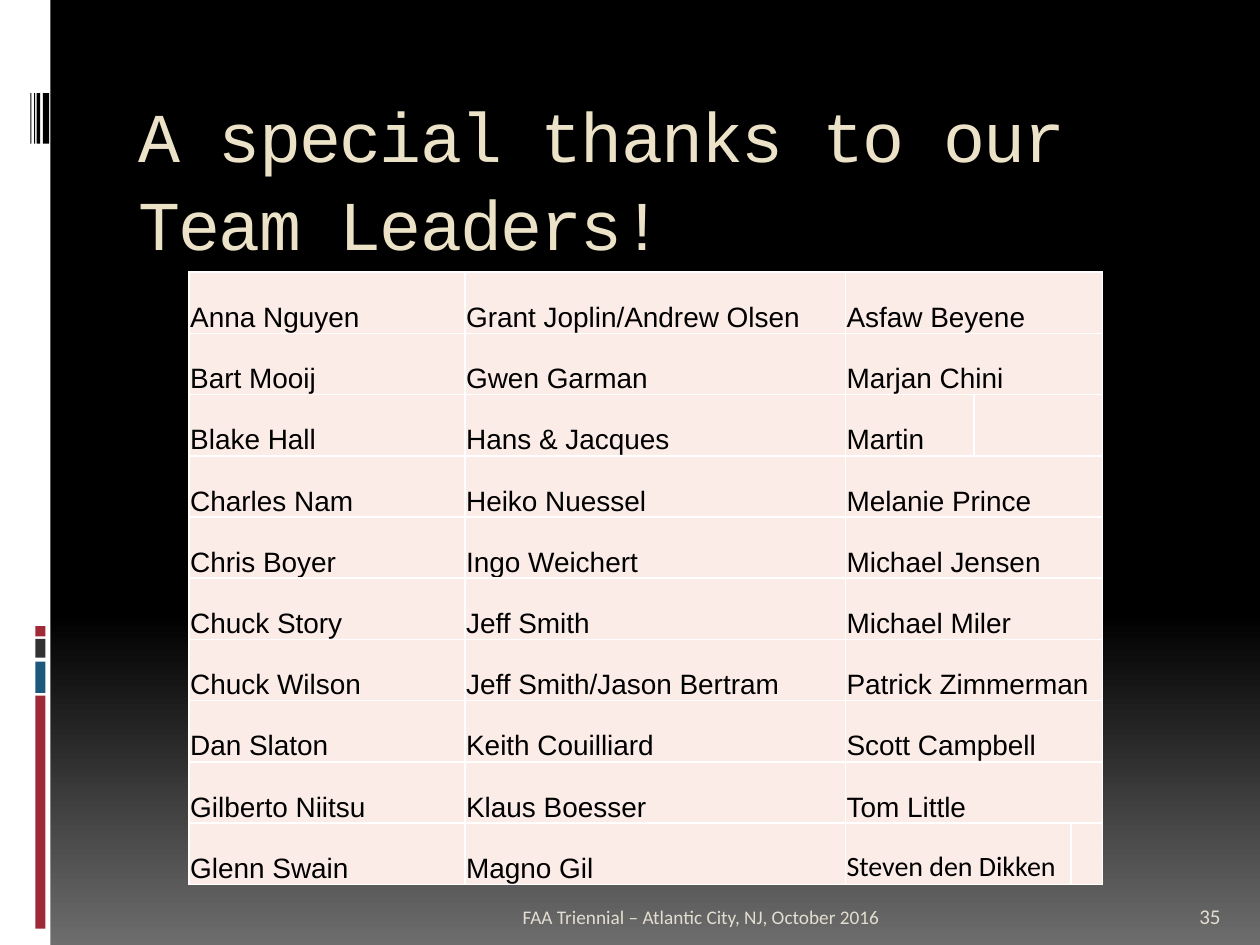
from dataclasses import dataclass

from lxml import etree
from pptx import Presentation
from pptx.dml.color import RGBColor
from pptx.enum.shapes import MSO_SHAPE
from pptx.enum.text import MSO_ANCHOR, PP_ALIGN
from pptx.oxml.ns import qn
from pptx.util import Inches, Pt

RECTANGLE = MSO_SHAPE.RECTANGLE
TOP, BOTTOM = MSO_ANCHOR.TOP, MSO_ANCHOR.BOTTOM
LEFT, RIGHT = PP_ALIGN.LEFT, PP_ALIGN.RIGHT


@dataclass(frozen=True)
class Theme:
    """Colours, fonts and type sizes of the slide."""
    black: str = "000000"
    white: str = "FFFFFF"
    fade: str = "6D6D6D"
    red: str = "9F2936"
    blue: str = "1B587C"
    charcoal: str = "323232"
    title: str = "ECE2C8"
    footer: str = "E3DED1"
    cell: str = "FCECE7"
    title_font: str = "Courier New"
    table_font: str = "Arial"
    small_font: str = "Calibri"
    title_size: int = 40
    table_size: int = 16
    footer_size: int = 11
    number_size: int = 12


THEME = Theme()
COLUMN_WIDTHS = (2.19, 3.02, 1.02, 0.77, 0.25)
LEADERS = (
    ("Anna Nguyen", "Grant Joplin/Andrew Olsen", "Asfaw Beyene"),
    ("Bart Mooij", "Gwen Garman", "Marjan Chini"),
    ("Blake Hall", "Hans & Jacques", "Martin"),
    ("Charles Nam", "Heiko Nuessel", "Melanie Prince"),
    ("Chris Boyer", "Ingo Weichert", "Michael Jensen"),
    ("Chuck Story", "Jeff Smith", "Michael Miler"),
    ("Chuck Wilson", "Jeff Smith/Jason Bertram", "Patrick Zimmerman"),
    ("Dan Slaton", "Keith Couilliard", "Scott Campbell"),
    ("Gilberto Niitsu", "Klaus Boesser", "Tom Little"),
    ("Glenn Swain", "Magno Gil", "Steven den Dikken"),
)
MERGES = {2: (3, 4), 9: (2, 3)}


def set_font(para, name, size, color):
    """Set the font of a whole paragraph."""
    para.font.name = name
    para.font.size = Pt(size)
    para.font.color.rgb = RGBColor.from_string(color)


def add_bar(page, left, top, width, height, color):
    """Add a plain filled rectangle."""
    bar = page.shapes.add_shape(
        RECTANGLE, Inches(left), Inches(top), Inches(width), Inches(height))
    bar.shadow.inherit = False
    bar.fill.solid()
    bar.fill.fore_color.rgb = RGBColor.from_string(color)
    bar.line.fill.background()


def add_text(page, bounds, text, font, anchor=BOTTOM, align=LEFT):
    """Add a wrapped one-paragraph text box and return its shape."""
    box = page.shapes.add_textbox(*map(Inches, bounds))
    frame = box.text_frame
    frame.word_wrap = True
    frame.vertical_anchor = anchor
    para = frame.paragraphs[0]
    para.text = text
    para.alignment = align
    set_font(para, *font)
    return box


def add_background(page):
    """Fade the page from black to grey at the bottom."""
    fill = page.background.fill
    fill.gradient()
    fill.gradient_angle = 270
    for stop, position, color in zip(
            fill.gradient_stops, (0.65, 1), (THEME.black, THEME.fade)):
        stop.position = position
        stop.color.rgb = RGBColor.from_string(color)


def add_side_band(page, left, top, width, height):
    """Draw the white band with its coloured blocks and black stripes."""
    add_bar(page, left, top, width, height, THEME.white)
    for offset, length, color in (
            (5.52, 1.85, THEME.red), (5.25, 0.25, THEME.blue),
            (5.07, 0.15, THEME.charcoal), (4.97, 0.08, THEME.red)):
        add_bar(page, left + 0.28, top + offset, 0.08, length, color)
    for offset, thickness in ((0.34, 0.05), (0.29, 0.03), (0.27, 0.01), (0.24, 0.01)):
        add_bar(page, left + offset, top + 0.74, thickness, 0.4, THEME.black)


def add_title(page, bounds):
    """Add the slightly tightened headline."""
    box = add_text(page, bounds, "A special thanks to our Team Leaders!",
                   (THEME.title_font, THEME.title_size, THEME.title), TOP)
    box.text_frame.margin_top = Inches(0.14)
    para = box.text_frame.paragraphs[0]
    para.line_spacing = 1.05
    para.runs[0].font._element.set("spc", "-100")


def style_cell(cell):
    """Give a cell white borders, a pale fill and narrow margins."""
    properties = cell._tc.get_or_add_tcPr()
    for side in ("a:lnL", "a:lnR", "a:lnT", "a:lnB"):
        line = etree.SubElement(properties, qn(side), w=str(Pt(1)))
        fill = etree.SubElement(line, qn("a:solidFill"))
        etree.SubElement(fill, qn("a:srgbClr"), val=THEME.white)
    cell.fill.solid()
    cell.fill.fore_color.rgb = RGBColor.from_string(THEME.cell)
    cell.vertical_anchor = BOTTOM
    cell.margin_left = cell.margin_right = cell.margin_top = Inches(0.01)
    cell.margin_bottom = 0


def add_leader_table(page, left, top, width, height):
    """Add the table of team leaders."""
    table = page.shapes.add_table(
        len(LEADERS), len(COLUMN_WIDTHS), Inches(left), Inches(top),
        Inches(width), Inches(height)).table
    for column, column_width in zip(table.columns, COLUMN_WIDTHS):
        column.width = Inches(column_width)
    for row in table.rows:
        row.height = Inches(height / len(LEADERS))
    for index, names in enumerate(LEADERS):
        for cell in table.rows[index].cells:
            style_cell(cell)
        for column, name in enumerate(names):
            para = table.cell(index, column).text_frame.paragraphs[0]
            para.text = name
            font = THEME.small_font if name == LEADERS[-1][-1] else THEME.table_font
            set_font(para, font, THEME.table_size, THEME.black)
        first, last = MERGES.get(index, (2, 4))
        table.cell(index, first).merge(table.cell(index, last))


def add_footer(page, left, top, width, height):
    """Add the event line and the page number."""
    add_text(page, (left, top, 6.08, height),
             "FAA Triennial – Atlantic City, NJ, October 2016",
             (THEME.small_font, THEME.footer_size, THEME.footer), align=RIGHT)
    add_text(page, (left + width - 0.5, top, 0.5, height), "35",
             (THEME.small_font, THEME.number_size, THEME.footer))


def main():
    """Build the slide and save it."""
    deck = Presentation()
    deck.slide_width, deck.slide_height = Inches(10), Inches(7.5)
    page = deck.slides.add_slide(deck.slide_layouts[6])
    add_background(page)
    add_side_band(page, 0, 0, 0.4, 7.5)
    add_title(page, (1, 0.56, 8.5, 1))
    add_footer(page, 1, 7.02, 8.92, 0.4)
    add_leader_table(page, 1.5, 2.16, 7.25, 4.86)
    deck.save("out.pptx")


if __name__ == "__main__":
    main()
